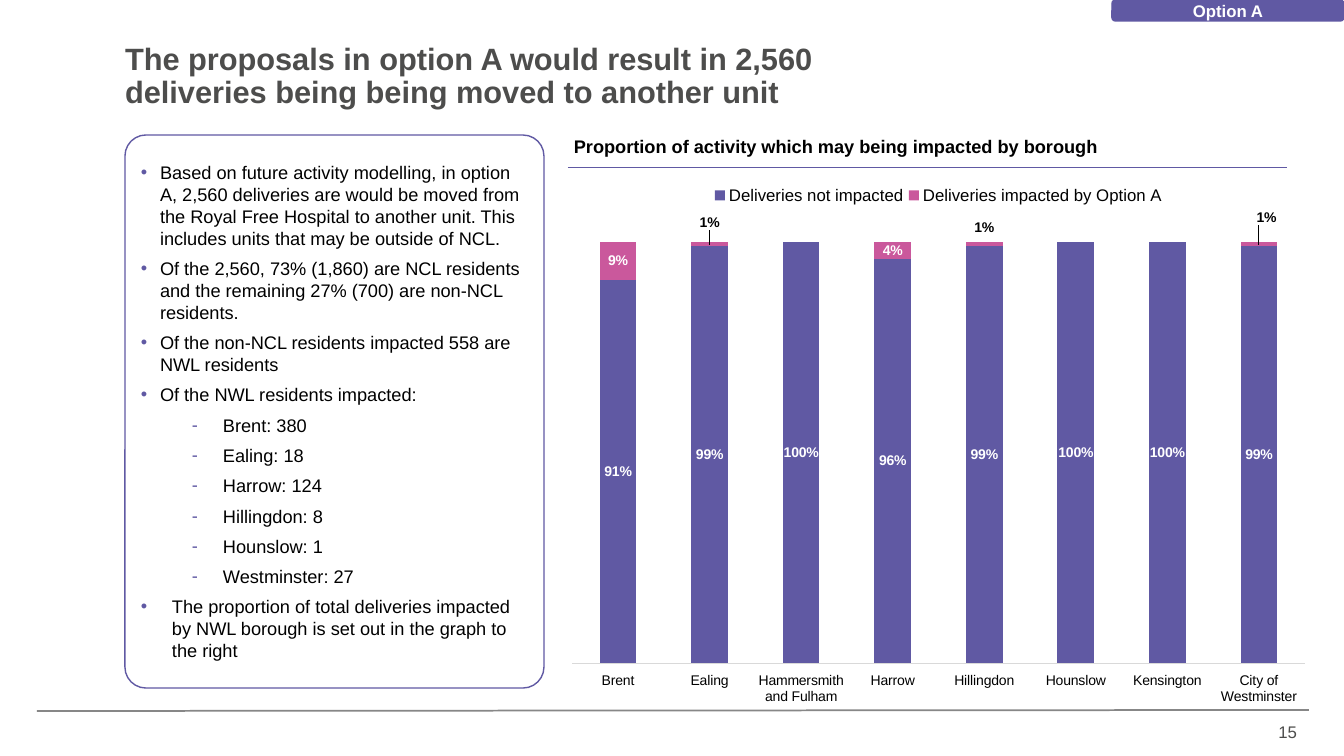
"""Build the Option A deliveries slide."""
from dataclasses import dataclass

from lxml import etree
from pptx import Presentation
from pptx.chart.data import CategoryChartData
from pptx.dml.color import RGBColor
from pptx.enum.chart import XL_CHART_TYPE, XL_LEGEND_POSITION, XL_TICK_LABEL_POSITION, XL_TICK_MARK
from pptx.enum.shapes import MSO_CONNECTOR, MSO_SHAPE
from pptx.enum.text import MSO_ANCHOR, PP_ALIGN
from pptx.oxml.ns import qn
from pptx.util import Emu, Pt

STACKED = XL_CHART_TYPE.COLUMN_STACKED_100
TOP_KEY = XL_LEGEND_POSITION.TOP
LOW = XL_TICK_LABEL_POSITION.LOW
NO_TICK = XL_TICK_MARK.NONE
STRAIGHT = MSO_CONNECTOR.STRAIGHT
ROUND = MSO_SHAPE.ROUNDED_RECTANGLE
MIDDLE, TOP = MSO_ANCHOR.MIDDLE, MSO_ANCHOR.TOP
LEFT, MID, RIGHT = PP_ALIGN.LEFT, PP_ALIGN.CENTER, PP_ALIGN.RIGHT


@dataclass(frozen=True)
class Theme:
    face: str = "Arial"
    violet: str = "6059A3"
    pink: str = "CA589C"
    gray: str = "4D4D4C"
    rule: str = "878787"
    axis: str = "D9D9D9"
    black: str = "000000"
    white: str = "FFFFFF"
    head: int = 22
    body: int = 13
    small: int = 12
    label: int = 10


@dataclass(frozen=True)
class Box:
    left: int
    top: int
    width: int
    height: int


@dataclass(frozen=True)
class Label:
    box: Box
    text: str
    size: int
    color: str
    bold: bool = True
    align: PP_ALIGN = LEFT
    inset: bool = True
    spacing: float = 1.0


@dataclass(frozen=True)
class Rule:
    start: tuple[int, int]
    end: tuple[int, int]
    color: str
    weight: float


@dataclass(frozen=True)
class Style:
    mark: str
    level: int
    left: int
    hang: int


@dataclass(frozen=True)
class Series:
    name: str
    values: tuple[float, ...]
    color: str
    format: str


THEME = Theme()
MAIN, DASH, LAST = Style("•", 0, 19, 19), Style("-", 2, 82, 31), Style("•", 1, 31, 31)

LABELS = (
    Label(Box(1220, 717, 87, 30), "15", THEME.small, THEME.gray, bold=False, align=RIGHT),
    Label(Box(125, 44, 765, 54),
          "The proposals in option A would result in 2,560 deliveries being being moved to another unit",
          THEME.head, THEME.gray, inset=False, spacing=0.9),
    Label(Box(564, 130, 638, 32), "Proportion of activity which may being impacted by borough",
          THEME.body, THEME.black),
)
RULES = (
    Rule((37, 711), (1309, 710), THEME.rule, 1.25),
    Rule((568, 167), (1287, 167), THEME.violet, 0.5),
)
POINTS = (
    (MAIN, "Based on future activity modelling, in option A, 2,560 deliveries are would be moved from "
           "the Royal Free Hospital to another unit. This includes units that may be outside of NCL."),
    (MAIN, "Of the 2,560, 73% (1,860) are NCL residents and the remaining 27% (700) are non-NCL residents."),
    (MAIN, "Of the non-NCL residents impacted 558 are NWL residents"),
    (MAIN, "Of the NWL residents impacted:"),
    (DASH, "Brent: 380"),
    (DASH, "Ealing: 18"),
    (DASH, "Harrow: 124"),
    (DASH, "Hillingdon: 8"),
    (DASH, "Hounslow: 1"),
    (DASH, "Westminster: 27"),
    (LAST, "The proportion of total deliveries impacted by NWL borough is set out in the graph to the right"),
)
AREAS = ("Brent", "Ealing", "Hammersmith and Fulham", "Harrow", "Hillingdon", "Hounslow",
         "Kensington", "City of Westminster")
SHARES = (0.09, 0.01, 0, 0.04, 0.01, 0, 0, 0.01)
SERIES = (
    Series("Deliveries not impacted", tuple(round(1 - n, 2) for n in SHARES), THEME.violet, "0%"),
    Series("Deliveries impacted by Option A", SHARES, THEME.pink, "0%;;"),
)
RAISED = {1: (0, -0.04), 4: (0, -0.03), 7: (0.01, -0.05)}


def px(count: int) -> Emu:
    """Turn pixels into EMU."""
    return Emu(round(count * 914400 / 100.8))


def place(box: Box) -> tuple[Emu, ...]:
    """Give the position and size of a box in EMU."""
    return px(box.left), px(box.top), px(box.width), px(box.height)


def rgb(color: str) -> RGBColor:
    """Read a hex colour."""
    return RGBColor.from_string(color)


def set_font(font, size: int, color: str, bold: bool = False) -> None:
    """Set the face, size, weight and colour of a font."""
    font.name, font.size, font.bold = THEME.face, Pt(size), bold
    font.color.rgb = rgb(color)


def add_label(slide, label: Label) -> None:
    """Add a text box of one paragraph."""
    frame = slide.shapes.add_textbox(*place(label.box)).text_frame
    frame.word_wrap, frame.vertical_anchor = True, TOP
    if not label.inset:
        frame.margin_left = frame.margin_right = frame.margin_top = frame.margin_bottom = 0
    para = frame.paragraphs[0]
    para.text, para.alignment, para.line_spacing = label.text, label.align, label.spacing
    set_font(para.font, label.size, label.color, label.bold)


def add_rule(slide, rule: Rule) -> None:
    """Add a straight line without a shadow."""
    ends = [px(n) for n in rule.start + rule.end]
    line = slide.shapes.add_connector(STRAIGHT, *ends)
    line.line.color.rgb, line.line.width = rgb(rule.color), Pt(rule.weight)
    etree.SubElement(line._element.spPr, qn("a:effectLst"))


def add_panel(slide, box: Box, fill: str, curve: float):
    """Add a rounded panel and return its text frame."""
    panel = slide.shapes.add_shape(ROUND, *place(box))
    panel.shadow.inherit = False
    panel.adjustments[0] = curve
    panel.fill.solid()
    panel.fill.fore_color.rgb = rgb(fill)
    panel.line.color.rgb, panel.line.width = rgb(THEME.violet), Pt(1)
    panel.text_frame.word_wrap, panel.text_frame.vertical_anchor = True, MIDDLE
    return panel.text_frame


def add_point(para, style: Style, text: str) -> None:
    """Fill a paragraph as a list point."""
    para.text, para.level, para.alignment, para.space_after = text, style.level, LEFT, Pt(6)
    props = para._p.get_or_add_pPr()
    props.set("marL", str(px(style.left)))
    props.set("indent", str(-px(style.hang)))
    tint = etree.SubElement(props, qn("a:buClr"))
    etree.SubElement(tint, qn("a:srgbClr"), val=THEME.violet)
    etree.SubElement(props, qn("a:buFont"), typeface=THEME.face)
    etree.SubElement(props, qn("a:buChar"), char=style.mark)
    set_font(para.font, THEME.body, THEME.black)


def make_layout(**parts: str | float):
    """Make a manual chart layout."""
    layout = etree.Element(qn("c:layout"))
    manual = etree.SubElement(layout, qn("c:manualLayout"))
    for name, value in parts.items():
        etree.SubElement(manual, qn(f"c:{name}"), val=str(value))
    return layout


def add_graph(slide, box: Box) -> None:
    """Add the stacked chart of shares by borough."""
    data = CategoryChartData(number_format="0%")
    data.categories = AREAS
    for item in SERIES:
        data.add_series(item.name, item.values)
    chart = slide.shapes.add_chart(STACKED, *place(box), data).chart
    set_font(chart.font, THEME.label, THEME.black)
    chart.has_title, chart.has_legend = False, True
    key = chart.legend
    key.position, key.include_in_layout = TOP_KEY, False
    set_font(key.font, THEME.small, THEME.black)
    for old in key._element.findall(qn("c:layout")):
        key._element.remove(old)
    key._element.find(qn("c:legendPos")).addnext(
        make_layout(xMode="edge", yMode="edge", x=0.2, y=0.02, w=0.6, h=0.04))
    axis = chart.category_axis
    axis.major_tick_mark, axis.tick_label_position = NO_TICK, LOW
    axis.format.line.color.rgb, axis.format.line.width = rgb(THEME.axis), Pt(0.75)
    set_font(axis.tick_labels.font, THEME.label, THEME.black)
    scale = chart.value_axis
    scale.visible, scale.has_major_gridlines = False, False
    scale.minimum_scale, scale.maximum_scale = 0, 1
    plot = chart.plots[0]
    plot.gap_width, plot.overlap, plot.vary_by_categories = 150, 100, False
    area = chart._chartSpace.chart.plotArea
    for old in area.findall(qn("c:layout")):
        area.remove(old)
    area.insert(0, make_layout(layoutTarget="inner", xMode="edge", yMode="edge",
                               x=0.02, y=0.127, w=0.96, h=0.784))
    for item, bars in zip(SERIES, plot.series):
        bars.format.fill.solid()
        bars.format.fill.fore_color.rgb = rgb(item.color)
        marks = bars.data_labels
        marks.show_value, marks.number_format, marks.number_format_is_linked = True, item.format, False
        set_font(marks.font, THEME.label, THEME.white, True)
    for index, (x, y) in RAISED.items():
        set_font(plot.series[1].points[index].data_label.font, THEME.label, THEME.black, True)
    for node, (x, y) in zip(plot.series[1].data_labels._element.findall(qn("c:dLbl")), RAISED.values()):
        node.insert(1, make_layout(x=x, y=y))
        node.insert(2, etree.Element(qn("c:numFmt"), formatCode="0%", sourceLinked="0"))


def main() -> None:
    """Build and save the slide."""
    deck = Presentation()
    deck.slide_width, deck.slide_height = px(1344), px(756)
    slide = deck.slides.add_slide(deck.slide_layouts[6])
    for rule in RULES:
        add_rule(slide, rule)
    for label in LABELS:
        add_label(slide, label)
    frame = add_panel(slide, Box(125, 135, 419, 553), THEME.white, 0.05)
    for index, (style, text) in enumerate(POINTS):
        add_point(frame.add_paragraph() if index else frame.paragraphs[0], style, text)
    badge = add_panel(slide, Box(1112, 0, 232, 21), THEME.violet, 0.17).paragraphs[0]
    badge.text, badge.alignment = "Option A", MID
    set_font(badge.font, THEME.small, THEME.white, True)
    add_graph(slide, Box(557, 174, 763, 537))
    deck.save("out.pptx")


if __name__ == "__main__":
    main()
